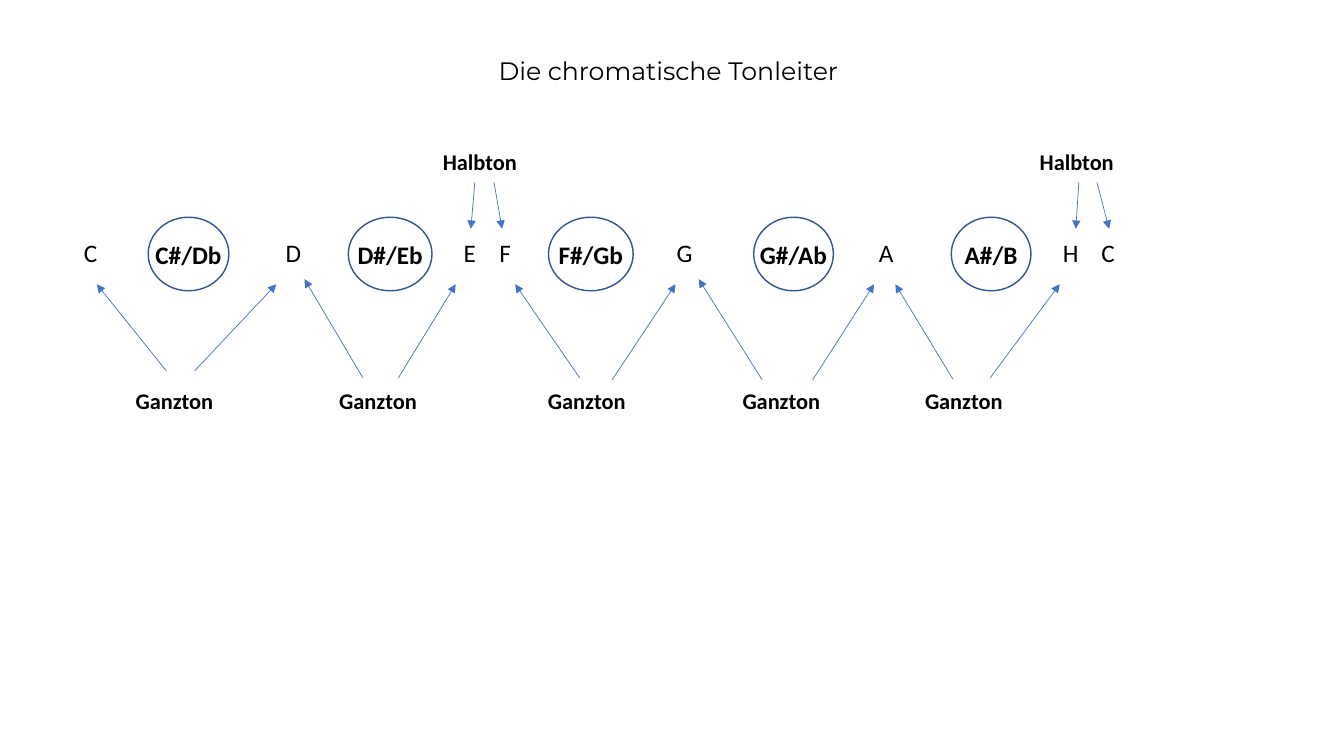
from dataclasses import dataclass

from lxml import etree
from pptx import Presentation
from pptx.dml.color import RGBColor
from pptx.enum.shapes import MSO_CONNECTOR, MSO_SHAPE
from pptx.enum.text import MSO_ANCHOR, PP_ALIGN
from pptx.oxml.ns import qn
from pptx.shapes.autoshape import Shape
from pptx.slide import Slide
from pptx.util import Inches, Pt

STRAIGHT = MSO_CONNECTOR.STRAIGHT
OVAL = MSO_SHAPE.OVAL
MIDDLE = MSO_ANCHOR.MIDDLE
CENTER = PP_ALIGN.CENTER

BLACK, CIRCLE_BLUE, ARROW_BLUE = "000000", "325491", "4472C4"
NOTE_Y, CIRCLE_Y, CIRCLE_HEIGHT = 2.5, 2.52, 0.73
LABEL_HEIGHT = 0.4

Point = tuple[float, float]


@dataclass(frozen=True)
class NaturalNote:
    name: str
    x: float


@dataclass(frozen=True)
class AccidentalNote:
    name: str
    x: float
    width: float


@dataclass(frozen=True)
class Interval:
    """A named step with one arrow to each of its two notes."""
    name: str
    x: float
    y: float
    arrows: tuple[tuple[Point, Point], ...]


NATURALS = [
    NaturalNote("C", 0.9), NaturalNote("D", 2.91), NaturalNote("E", 4.66),
    NaturalNote("F", 5.01), NaturalNote("G", 6.79), NaturalNote("A", 8.79),
    NaturalNote("H", 10.62), NaturalNote("C", 10.99),
]
ACCIDENTALS = [
    AccidentalNote("C#/Db", 1.87, 0.8), AccidentalNote("D#/Eb", 3.87, 0.83),
    AccidentalNote("F#/Gb", 5.86, 0.84), AccidentalNote("G#/Ab", 7.87, 0.79),
    AccidentalNote("A#/B", 9.83, 0.79),
]


def whole_step(x: float, *arrows: tuple[Point, Point]) -> Interval:
    return Interval("Ganzton", x, 3.97, arrows)


def half_step(x: float, *arrows: tuple[float, float]) -> Interval:
    """Each arrow is given by its start and end x."""
    return Interval("Halbton", x, 1.6,
                    tuple(((start, 1.81), (end, 2.27)) for start, end in arrows))


INTERVALS = [
    whole_step(1.73, ((1.65, 3.68), (0.96, 2.82)), ((1.93, 3.68), (2.74, 2.82))),
    whole_step(3.75, ((3.6, 3.75), (3.02, 2.77)), ((3.95, 3.75), (4.52, 2.82))),
    whole_step(5.82, ((5.75, 3.75), (5.11, 2.82)), ((6.07, 3.77), (6.7, 2.82))),
    whole_step(7.75, ((7.56, 3.77), (6.93, 2.77)), ((8.06, 3.77), (8.67, 2.82))),
    whole_step(9.56, ((9.45, 3.76), (8.88, 2.82)), ((9.82, 3.75), (10.51, 2.82))),
    half_step(4.76, (4.71, 4.67), (4.9, 4.98)),
    half_step(10.68, (10.7, 10.67), (10.88, 11)),
]


def rgb(value: str) -> RGBColor:
    return RGBColor.from_string(value)


def write_centered(shape: Shape, text: str, size: float, bold: bool = False,
                   font_name: str = "Calibri") -> None:
    frame = shape.text_frame
    frame.text = text
    frame.word_wrap = False
    frame.vertical_anchor = MIDDLE
    frame.margin_left = frame.margin_right = 0
    frame.margin_top = frame.margin_bottom = 0
    paragraph = frame.paragraphs[0]
    paragraph.alignment = CENTER
    font = paragraph.runs[0].font
    font.name = font_name
    font.size = Pt(size)
    font.bold = bold
    font.color.rgb = rgb(BLACK)


def add_label(slide: Slide, text: str, x: float, y: float, width: float,
              size: float, bold: bool = False, font_name: str = "Calibri") -> None:
    """Place text with its centre at x, y."""
    label = slide.shapes.add_textbox(
        Inches(x - width / 2), Inches(y - LABEL_HEIGHT / 2),
        Inches(width), Inches(LABEL_HEIGHT))
    write_centered(label, text, size, bold, font_name)


def add_accidental(slide: Slide, note: AccidentalNote) -> None:
    circle = slide.shapes.add_shape(
        OVAL, Inches(note.x - note.width / 2), Inches(CIRCLE_Y - CIRCLE_HEIGHT / 2),
        Inches(note.width), Inches(CIRCLE_HEIGHT))
    circle.shadow.inherit = False
    circle.fill.background()
    circle.line.color.rgb = rgb(CIRCLE_BLUE)
    circle.line.width = Pt(1)
    write_centered(circle, note.name, 18, bold=True)


def add_arrow(slide: Slide, start: Point, end: Point) -> None:
    arrow = slide.shapes.add_connector(
        STRAIGHT, *(Inches(length) for length in (*start, *end)))
    arrow.line.color.rgb = rgb(ARROW_BLUE)
    arrow.line.width = Pt(0.5)
    etree.SubElement(arrow.line._get_or_add_ln(), qn("a:tailEnd"), type="triangle")
    etree.SubElement(arrow._element.spPr, qn("a:effectLst"))


def add_interval(slide: Slide, interval: Interval) -> None:
    add_label(slide, interval.name, interval.x, interval.y, 1, 16, bold=True)
    for start, end in interval.arrows:
        add_arrow(slide, start, end)


def main() -> None:
    presentation = Presentation()
    presentation.slide_width = Inches(13.33)
    presentation.slide_height = Inches(7.5)
    slide = presentation.slides.add_slide(presentation.slide_layouts[6])

    add_label(slide, "Die chromatische Tonleiter", 6.63, 0.7, 5, 18,
              font_name="Montserrat")
    for accidental in ACCIDENTALS:
        add_accidental(slide, accidental)
    for natural in NATURALS:
        add_label(slide, natural.name, natural.x, NOTE_Y, 0.3, 18)
    for interval in INTERVALS:
        add_interval(slide, interval)
    presentation.save("out.pptx")


if __name__ == "__main__":
    main()
